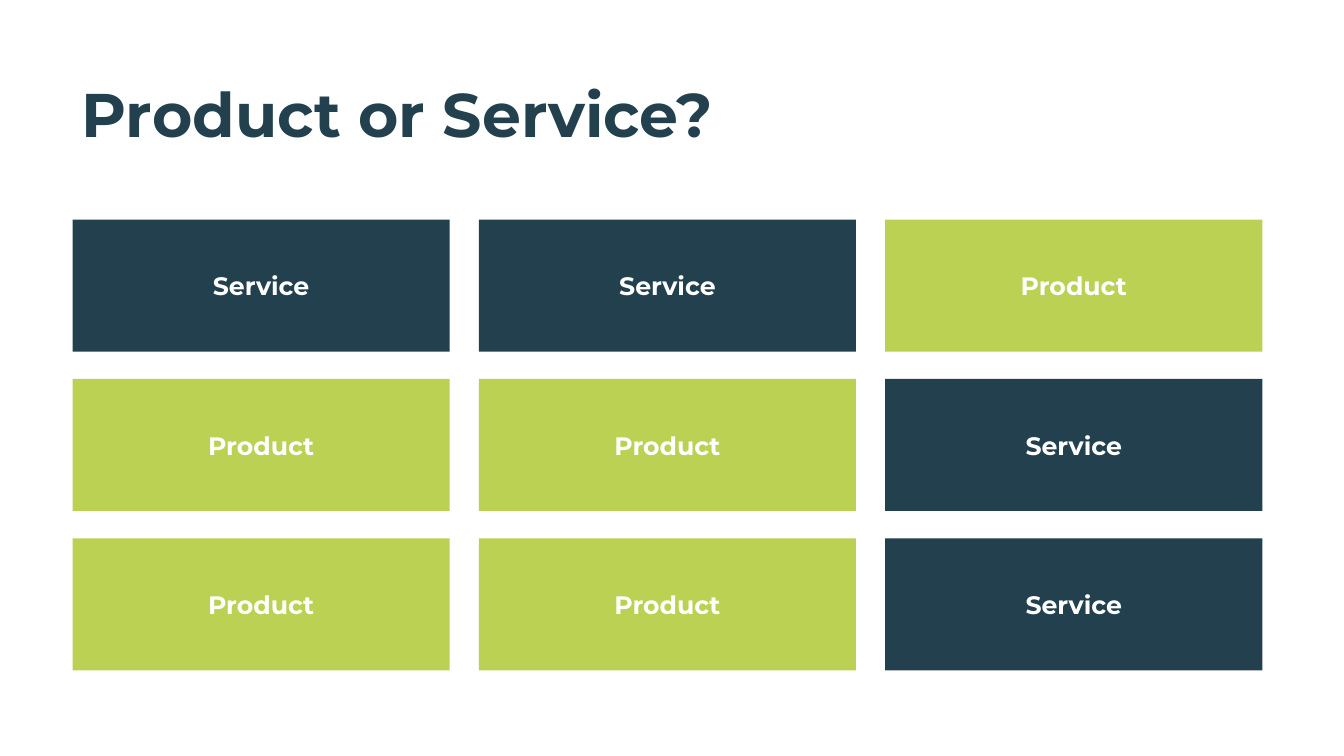
from dataclasses import dataclass

from pptx import Presentation
from pptx.dml.color import RGBColor
from pptx.enum.shapes import MSO_SHAPE
from pptx.enum.text import MSO_ANCHOR, PP_ALIGN
from pptx.util import Inches, Pt

RECT = MSO_SHAPE.RECTANGLE
MIDDLE = MSO_ANCHOR.MIDDLE
LEFT, CENTER = PP_ALIGN.LEFT, PP_ALIGN.CENTER


@dataclass(frozen=True)
class Theme:
    font: str = "Montserrat"
    navy: str = "22404D"
    lime: str = "BBD153"
    white: str = "FFFFFF"
    title: int = 44
    label: int = 18


def write(frame, text, *, font, size, color, align=LEFT, spacing=None):
    frame.word_wrap = True
    frame.vertical_anchor = MIDDLE
    para = frame.paragraphs[0]
    para.alignment = align
    if spacing:
        para.line_spacing = spacing
    run = para.add_run()
    run.text = text
    run.font.name = font
    run.font.size = Pt(size)
    run.font.bold = True
    run.font.color.rgb = RGBColor.from_string(color)


class Board:
    def __init__(self, slide, theme):
        self.slide = slide
        self.theme = theme

    def title(self, text, left, top, width, height):
        box = self.slide.shapes.add_textbox(
            Inches(left), Inches(top), Inches(width), Inches(height))
        write(box.text_frame, text, font=self.theme.font,
              size=self.theme.title, color=self.theme.navy, spacing=0.9)

    def card(self, text, fill, left, top, width, height):
        card = self.slide.shapes.add_shape(
            RECT, Inches(left), Inches(top), Inches(width), Inches(height))
        card.shadow.inherit = False
        card.fill.solid()
        card.fill.fore_color.rgb = RGBColor.from_string(fill)
        card.line.fill.background()
        write(card.text_frame, text, font=self.theme.font,
              size=self.theme.label, color=self.theme.white, align=CENTER)


def main():
    deck = Presentation()
    deck.slide_width, deck.slide_height = Inches(13.33), Inches(7.5)
    theme = Theme()
    board = Board(deck.slides.add_slide(deck.slide_layouts[6]), theme)

    board.title("Product or Service?", 0.71, 0.84, 12.11, 0.66)

    fills = {"Service": theme.navy, "Product": theme.lime}
    rows = [
        ["Service", "Service", "Product"],
        ["Product", "Product", "Service"],
        ["Product", "Product", "Service"],
    ]
    for row, labels in enumerate(rows):
        for col, label in enumerate(labels):
            board.card(label, fills[label],
                       0.72 + col * 4.03, 2.18 + row * 1.58, 3.74, 1.31)

    deck.save("out.pptx")


if __name__ == "__main__":
    main()
